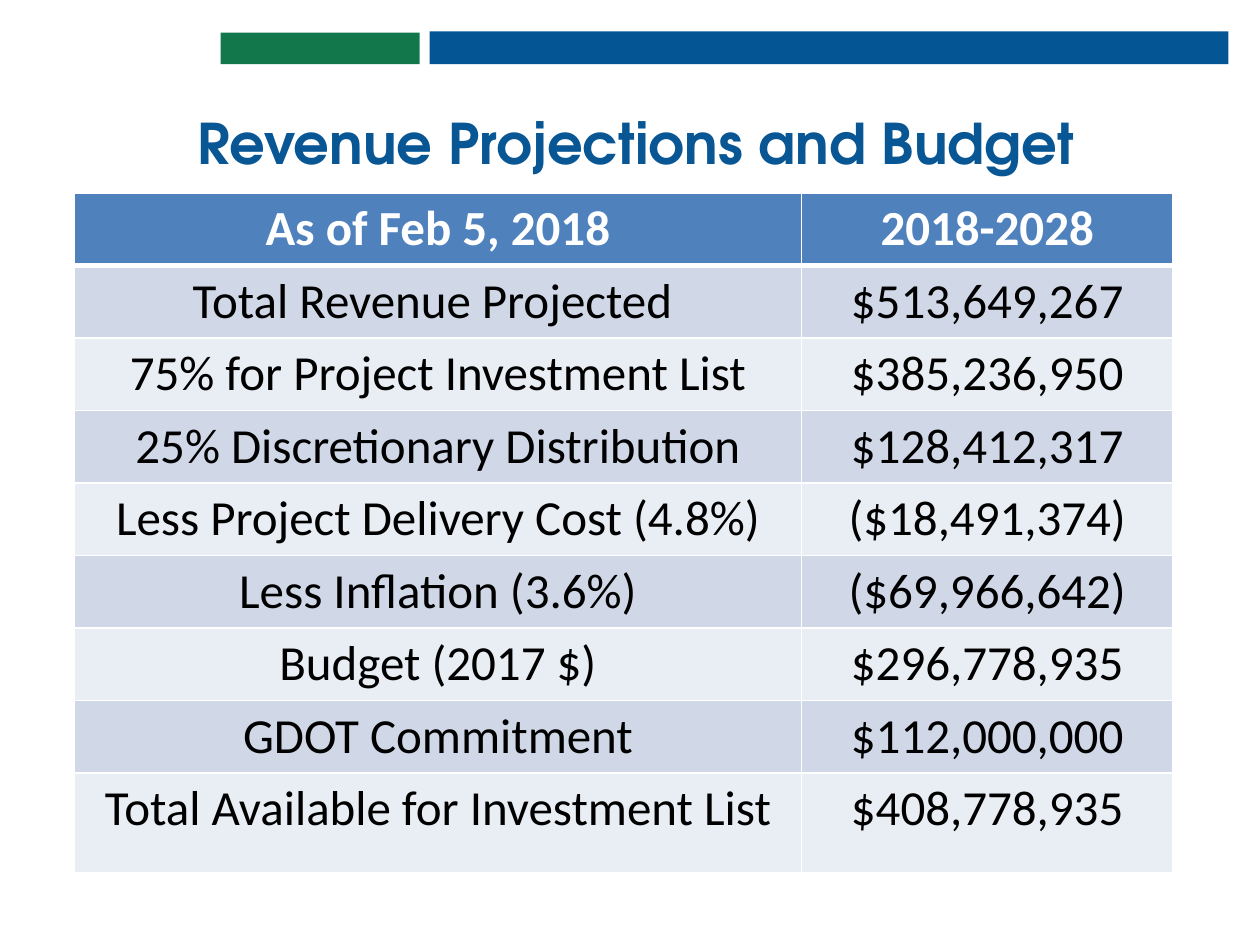
import pptx
import pptx.dml.color
import pptx.enum.shapes
import pptx.enum.text
import pptx.oxml
import pptx.oxml.ns
import pptx.util
from pptx.util import Inches

ANCHOR = pptx.enum.text.MSO_ANCHOR
CENTER = pptx.enum.text.PP_ALIGN.CENTER
BLUE, GREEN, TITLE_BLUE = "035594", "12784B", "085694"
HEADER_FILL, BAND_FILLS = "4F81BD", ("D0D8E8", "E9EDF4")
WHITE, BLACK = "FFFFFF", "000000"

BUDGET = [
    ("As of Feb 5, 2018", "2018-2028"),
    ("Total Revenue Projected ", "$513,649,267"),
    ("75% for Project Investment List", "$385,236,950"),
    ("25% Discretionary Distribution", "$128,412,317"),
    ("Less Project Delivery Cost (4.8%)", "($18,491,374)"),
    ("Less Inflation (3.6%)", "($69,966,642)"),
    ("Budget (2017 $)", "$296,778,935"),
    ("GDOT Commitment", "$112,000,000"),
    ("Total Available for Investment List", "$408,778,935"),
]
COLUMN_WIDTHS = (5.77, 2.95)
ROW_HEIGHTS = [0.54] * 4 + [0.56] + [0.54] * 3 + [0.79]


def rgb(hex_color):
    return pptx.dml.color.RGBColor.from_string(hex_color)


def paint(target, hex_color):
    target.fill.solid()
    target.fill.fore_color.rgb = rgb(hex_color)


class SlideBuilder:
    title_format = {"name": "TeX Gyre Adventor", "size": pptx.util.Pt(32), "bold": True}
    cell_format = {"name": "Calibri", "size": pptx.util.Pt(28)}

    def __init__(self, slide):
        self.slide = slide

    def set_text(self, paragraph, text, color, formats):
        paragraph.text = text
        paragraph.alignment = CENTER
        for attribute, value in formats.items():
            setattr(paragraph.font, attribute, value)
        paragraph.font.color.rgb = rgb(color)

    def bar(self, left, top, width, height, color):
        bar = self.slide.shapes.add_shape(
            pptx.enum.shapes.MSO_SHAPE.RECTANGLE,
            Inches(left), Inches(top), Inches(width), Inches(height))
        bar.shadow.inherit = False
        paint(bar, color)
        bar.line.fill.background()

    def title(self, text, left, top, width, height):
        title = self.slide.shapes.title
        title.left, title.top = Inches(left), Inches(top)
        title.width, title.height = Inches(width), Inches(height)
        frame = title.text_frame
        frame.vertical_anchor = ANCHOR.BOTTOM
        frame.auto_size = pptx.enum.text.MSO_AUTO_SIZE.NONE
        frame.word_wrap = True
        self.set_text(frame.paragraphs[0], text, TITLE_BLUE, self.title_format)
        frame.paragraphs[0].line_spacing = 0.9

    def borders(self, cell, **widths):
        """Draw white cell borders; widths in points by side (L, R, T, B)."""
        properties = cell._tc.get_or_add_tcPr()
        for position, (side, width) in enumerate(widths.items()):
            properties.insert(position, pptx.oxml.parse_xml(
                f'<a:ln{side} {pptx.oxml.ns.nsdecls("a")} w="{pptx.util.Pt(width)}">'
                f'<a:solidFill><a:srgbClr val="{WHITE}"/></a:solidFill></a:ln{side}>'))

    def table(self, rows, left, top, column_widths, row_heights):
        table = self.slide.shapes.add_table(
            len(rows), len(column_widths), Inches(left), Inches(top),
            Inches(sum(column_widths)), Inches(sum(row_heights))).table
        for column, width in zip(table.columns, column_widths):
            column.width = Inches(width)
        for row, height in zip(table.rows, row_heights):
            row.height = Inches(height)
        for r, texts in enumerate(rows):
            header = r == 0
            for c, text in enumerate(texts):
                cell = table.cell(r, c)
                paint(cell, HEADER_FILL if header else BAND_FILLS[(r - 1) % 2])
                cell.vertical_anchor = ANCHOR.BOTTOM if header else ANCHOR.TOP
                self.set_text(cell.text_frame.paragraphs[0], text,
                              WHITE if header else BLACK,
                              {**self.cell_format, "bold": header})
                self.borders(cell, L=1, R=1, T=3 if r == 1 else 1, B=3 if header else 1)


def main():
    deck = pptx.Presentation()
    deck.slide_width, deck.slide_height = Inches(10), Inches(7.5)
    title_only = deck.slide_layouts[5]
    builder = SlideBuilder(deck.slides.add_slide(title_only))
    builder.bar(3.41, 0.25, 6.34, 0.26, BLUE)
    builder.bar(1.75, 0.26, 1.58, 0.25, GREEN)
    builder.title("Revenue Projections and Budget", 1, 0.82, 8.1, 0.63)
    builder.table(BUDGET, 0.59, 1.53, COLUMN_WIDTHS, ROW_HEIGHTS)
    deck.save("out.pptx")


if __name__ == "__main__":
    main()
